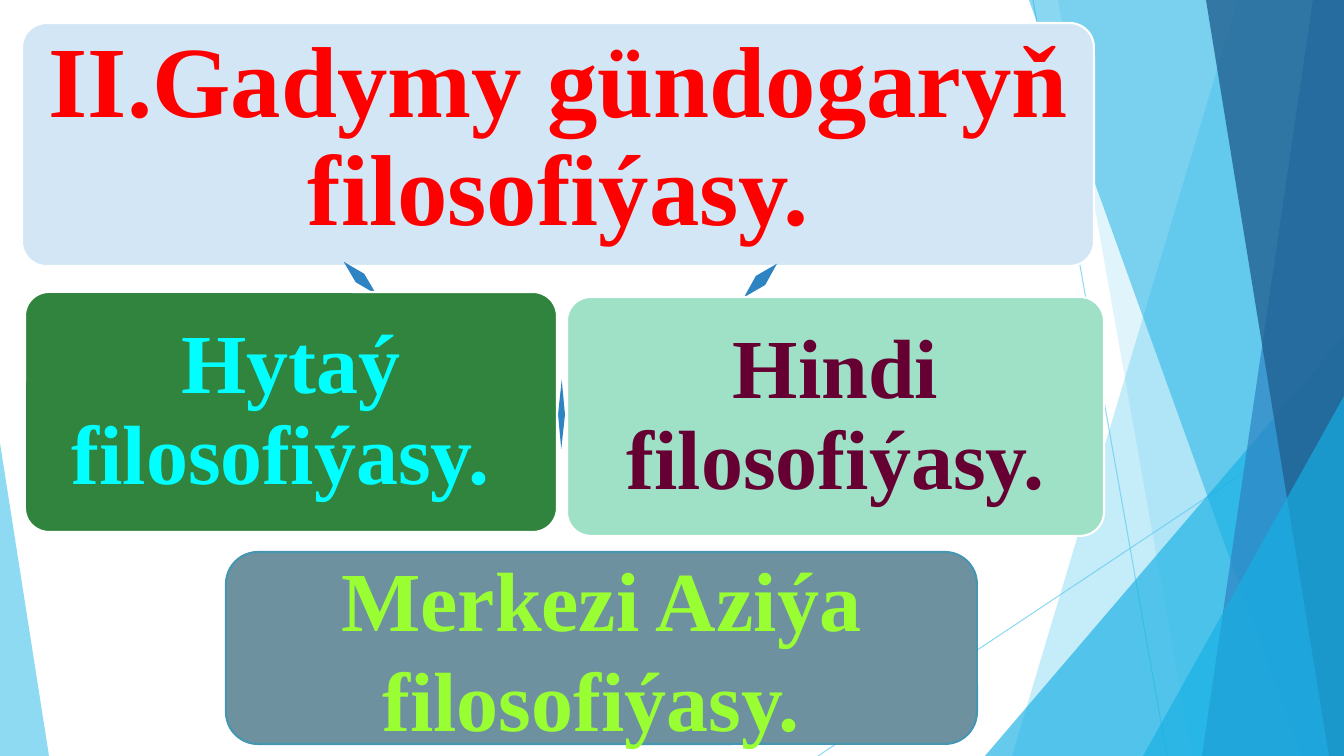
import pptx
import pptx.util
import pptx.dml.color
import pptx.enum.shapes
import pptx.enum.text
import pptx.oxml.ns
import lxml.etree

PX = 9525 * 96 / 100.8 * 1.0  # one px in EMU
WIDE, HIGH = 1344, 756
FONT = "Times New Roman"
KIND = pptx.enum.shapes.MSO_SHAPE
MID = pptx.enum.text.MSO_ANCHOR.MIDDLE
TOP = pptx.enum.text.MSO_ANCHOR.TOP

# Content: text, box, fill, line, text colour, corner, inset
TITLE = "II.Gadymy gündogaryň filosofiýasy."
HEAD = (22, 23, 1072, 243)
CARDS = [
    ("Hindi filosofiýasy.", (567, 297, 537, 239), "9FE1C6", "FFFFFF", "660033", 0.1, 32),
    ("Hytaý filosofiýasy. ", (25, 292, 532, 240), "31843D", "FFFFFF", "00FFFF", 0.1, 32),
    ("Merkezi Aziýa filosofiýasy. ", (226, 552, 751, 192), "6E91A0", "4696B1", "99FF33", 0.1667, 10),
]
# Arrows between the cards: box, turn
ARROWS = [
    ((754, 257, 13, 47), 44.5),
    ((558, 380, 7, 69), 180.4),
    ((354, 255, 12, 46), 314.9),
]
# Backdrop: lines, then bands (top x, bottom x) and wedges in stacking order
RAYS = [((1033, 0), (1167, 756)), ((1344, 406), (818, 756))]
BANDS = [
    ("band", (1238, 1012), "5FCBEF", 36),
    ("band", (1058, 1192), "5FCBEF", 20),
    ("wedge", (985, 336, 359, 420, 1), "17B0E4", 66),
    ("band", (1029, 1301), "17B0E4", 50),
    ("band", (1313, 1202), "2E83C3", 70),
    ("band", (1206, 1329), "226292", 80),
    ("wedge", (1143, 396, 201, 360, 1), "17B0E4", 66),
    ("wedge", (0, 443, 49, 313, 0), "5FCBEF", 70),
]


def emu(*nums):
    return [pptx.util.Emu(round(n * PX)) for n in nums]


def tint(part, code, clear=100):
    """Set a solid colour on a fill or a line fill, with opacity in percent."""
    part.solid()
    part.fore_color.rgb = pptx.dml.color.RGBColor.from_string(code)
    if clear < 100:
        node = part._xPr.find(".//" + pptx.oxml.ns.qn("a:srgbClr"))
        lxml.etree.SubElement(node, pptx.oxml.ns.qn("a:alpha"), val=str(clear * 1000))


def paint(shape, fill, line=None, clear=100):
    shape.shadow.inherit = False
    tint(shape.fill, fill, clear)
    if line:
        tint(shape.line.fill, line)
        shape.line.width = pptx.util.Pt(1.5)
    else:
        shape.line.fill.background()


def write(shape, text, size=60, color="000000", inset=(10, 5), space=1.0, anchor=MID):
    frame = shape.text_frame
    frame.word_wrap = True
    frame.auto_size = pptx.enum.text.MSO_AUTO_SIZE.NONE
    frame.vertical_anchor = anchor
    side, edge = emu(*inset)
    frame.margin_left = frame.margin_right = side
    frame.margin_top = frame.margin_bottom = edge
    para = frame.paragraphs[0]
    para.alignment = pptx.enum.text.PP_ALIGN.CENTER
    para.line_spacing = space
    para.space_after = pptx.util.Pt(0)
    run = para.add_run()
    run.text = text
    run.font.name = FONT
    run.font.size = pptx.util.Pt(size)
    run.font.bold = True
    tint(run.font.fill, color)


deck = pptx.Presentation()
deck.slide_width, deck.slide_height = emu(WIDE, HIGH)
slide = deck.slides.add_slide(deck.slide_layouts[5])
shapes = slide.shapes

# Backdrop rays
for start, end in RAYS:
    ray = shapes.add_connector(pptx.enum.shapes.MSO_CONNECTOR.STRAIGHT, *emu(*start, *end))
    ray.line.width = pptx.util.Pt(0.75)
    tint(ray.line.fill, "5FCBEF", 70)
    lxml.etree.SubElement(ray._element.spPr, pptx.oxml.ns.qn("a:effectLst"))

# Backdrop bands and wedges
for kind, place, fill, clear in BANDS:
    if kind == "band":
        top, base = place
        form = shapes.build_freeform(top, 0, scale=PX)
        form.add_line_segments([(WIDE, 0), (WIDE, HIGH), (base, HIGH)], close=True)
        piece = form.convert_to_shape()
    else:
        piece = shapes.add_shape(KIND.ISOSCELES_TRIANGLE, *emu(*place[:4]))
        piece.adjustments[0] = place[4]
    paint(piece, fill, clear=clear)

# Heading panel with the title on top
panel = shapes.add_shape(KIND.ROUNDED_RECTANGLE, *emu(*HEAD))
panel.adjustments[0] = 0.1
paint(panel, "D3E6F5", "FFFFFF")
title = shapes.title
title.left, title.top, title.width, title.height = emu(30, 30, 1057, 229)
write(title, TITLE, size=72, color="FF0000", inset=(17, 0), space=0.9, anchor=TOP)
panel._element.addnext(title._element)

# Arrows
for box, turn in ARROWS:
    arrow = shapes.add_shape(KIND.LEFT_RIGHT_ARROW, *emu(*box))
    arrow.adjustments[0], arrow.adjustments[1] = 0.6, 0.5
    arrow.rotation = turn
    paint(arrow, "2E83C3")

# Cards
for text, box, fill, line, color, corner, inset in CARDS:
    card = shapes.add_shape(KIND.ROUNDED_RECTANGLE, *emu(*box))
    card.adjustments[0] = corner
    paint(card, fill, line)
    space = 0.9 if corner == 0.1 else 1.0
    write(card, text, color=color, inset=(inset, inset // 2), space=space)

deck.save("out.pptx")
